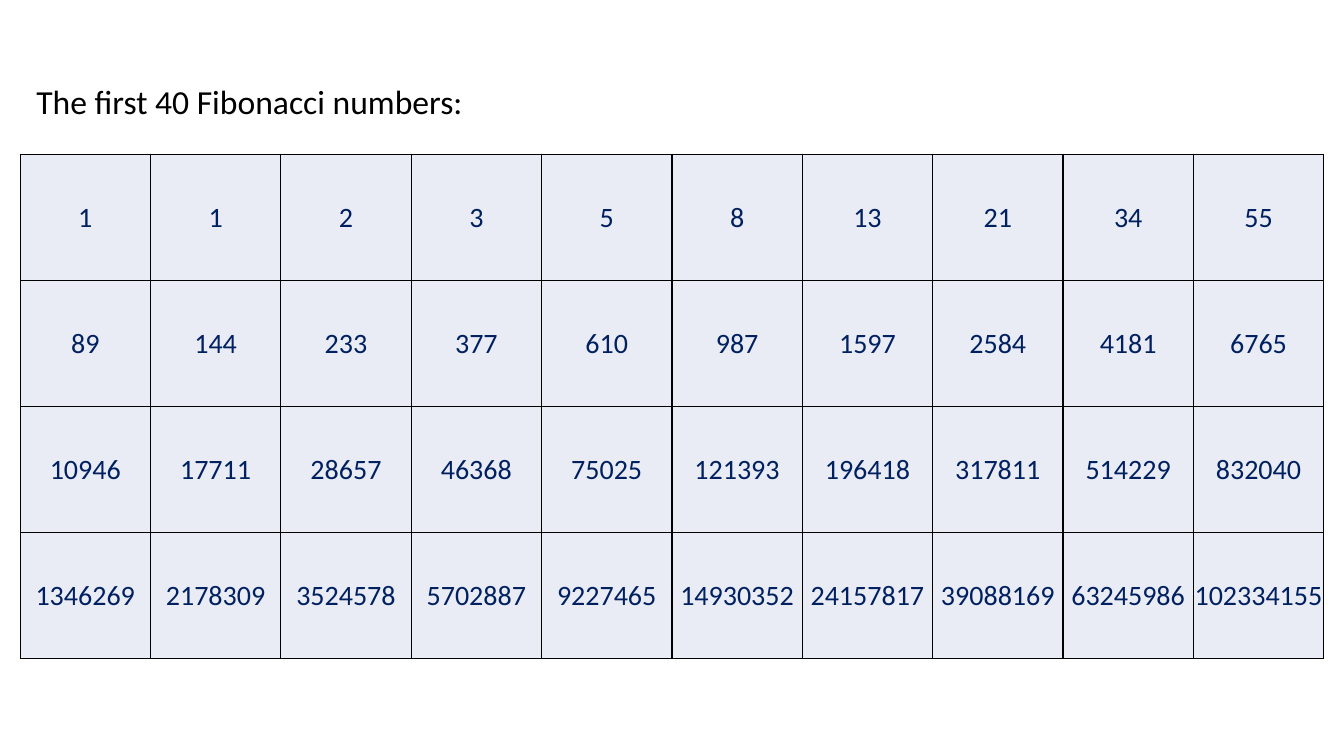
from lxml import etree
from pptx import Presentation
from pptx.dml.color import RGBColor
from pptx.enum.text import MSO_ANCHOR, MSO_AUTO_SIZE, PP_ALIGN
from pptx.oxml.ns import qn
from pptx.util import Inches, Pt

ROWS, COLUMNS = 4, 10


def color(hex_code):
    return RGBColor.from_string(hex_code)


def fibonacci(count):
    numbers = [1, 1]
    while len(numbers) < count:
        numbers.append(numbers[-1] + numbers[-2])
    return numbers


class SlideBuilder:
    FONT = "Calibri"
    HEADING_COLOR = "000000"
    NUMBER_COLOR = "002060"
    CELL_FILL = "E9EBF5"
    BORDER_COLOR = "000000"
    BORDER_WIDTH = Pt(1)

    def __init__(self, slide):
        self.slide = slide

    def style(self, paragraph, size, hex_code, align):
        paragraph.alignment = align
        paragraph.font.name = self.FONT
        paragraph.font.size = Pt(size)
        paragraph.font.color.rgb = color(hex_code)

    def heading(self, text, left, top, width, height):
        title = self.slide.shapes.title
        title.left, title.top = Inches(left), Inches(top)
        title.width, title.height = Inches(width), Inches(height)
        frame = title.text_frame
        frame.text = text
        frame.word_wrap = True
        frame.auto_size = MSO_AUTO_SIZE.SHAPE_TO_FIT_TEXT
        frame.vertical_anchor = MSO_ANCHOR.TOP
        self.style(frame.paragraphs[0], 24, self.HEADING_COLOR, PP_ALIGN.LEFT)

    def border(self, cell):
        properties = cell._tc.get_or_add_tcPr()
        for side in ("lnL", "lnR", "lnT", "lnB"):
            line = etree.SubElement(properties, qn(f"a:{side}"), w=str(self.BORDER_WIDTH))
            fill = etree.SubElement(line, qn("a:solidFill"))
            etree.SubElement(fill, qn("a:srgbClr"), val=self.BORDER_COLOR)

    def number_cell(self, cell, number):
        self.border(cell)
        cell.fill.solid()
        cell.fill.fore_color.rgb = color(self.CELL_FILL)
        cell.margin_left = cell.margin_right = cell.margin_top = Inches(0.01)
        cell.margin_bottom = 0
        cell.vertical_anchor = MSO_ANCHOR.MIDDLE
        cell.text = str(number)
        self.style(cell.text_frame.paragraphs[0], 20, self.NUMBER_COLOR, PP_ALIGN.CENTER)

    def number_table(self, numbers, left, top, width, height):
        table = self.slide.shapes.add_table(
            ROWS, COLUMNS, Inches(left), Inches(top), Inches(width), Inches(height)
        ).table
        table.first_row = table.horz_banding = False
        for cell, number in zip(table.iter_cells(), numbers):
            self.number_cell(cell, number)


def main():
    presentation = Presentation()
    presentation.slide_width, presentation.slide_height = Inches(13.33), Inches(7.5)
    title_only = presentation.slide_layouts[5]
    builder = SlideBuilder(presentation.slides.add_slide(title_only))

    # Heading
    builder.heading("The first 40 Fibonacci numbers:", 0.26, 0.75, 8.29, 0.5)

    # Number grid, filled row by row
    builder.number_table(fibonacci(ROWS * COLUMNS), 0.2, 1.53, 12.93, 5)

    presentation.save("out.pptx")


if __name__ == "__main__":
    main()
